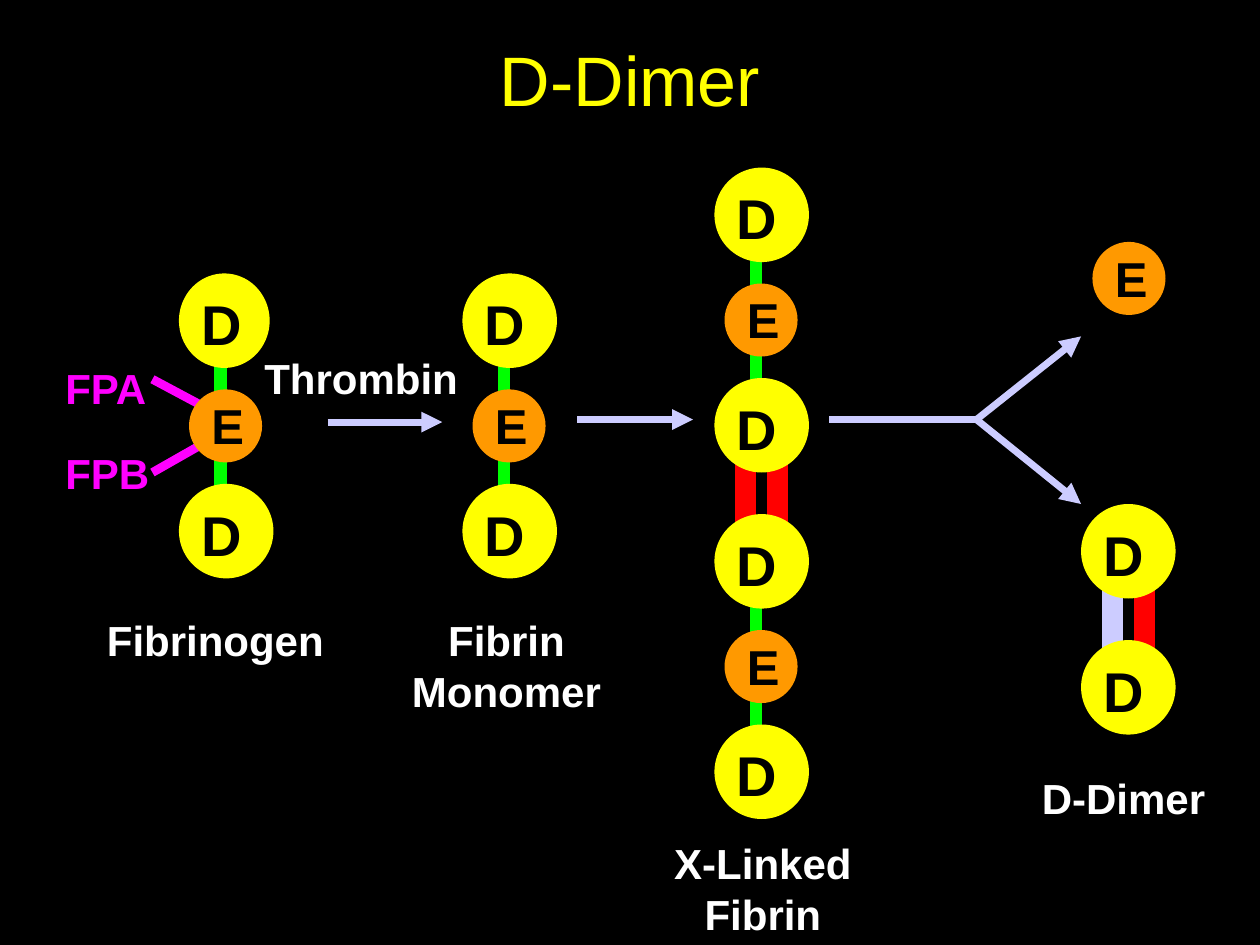
import dataclasses

import lxml.etree
import pptx
import pptx.dml.color
import pptx.enum.shapes
import pptx.enum.text
import pptx.oxml.ns
import pptx.util

Inches = pptx.util.Inches
qn = pptx.oxml.ns.qn


@dataclasses.dataclass(frozen=True)
class Theme:
    font: str = "Arial"
    background: str = "000000"
    letter: str = "000000"
    title: str = "FFFF00"
    label: str = "FFFFFF"
    d_domain: str = "FFFF00"
    e_domain: str = "FF9900"
    peptide: str = "FF00FF"
    strand: str = "00FF00"
    crosslink: str = "FF0000"
    arrow: str = "CCCCFF"
    title_size: int = 40
    d_size: int = 32
    e_size: int = 28
    label_size: int = 24


class Diagram:
    def __init__(self, prs, theme):
        self.theme = theme
        self.s = prs.slides.add_slide(prs.slide_layouts[5])
        fill = self.s.background.fill
        fill.solid()
        fill.fore_color.rgb = self.rgb(theme.background)

    def rgb(self, color):
        return pptx.dml.color.RGBColor.from_string(color)

    def run(self, p, text, size, color, bold):
        r = p.add_run()
        r.text = text
        r.font.name = self.theme.font
        r.font.size = pptx.util.Pt(size)
        r.font.bold = bold
        r.font.color.rgb = self.rgb(color)

    def title(self, text):
        sp = self.s.shapes.title
        sp.left, sp.top = Inches(0.75), Inches(0)
        sp.width, sp.height = Inches(8.5), Inches(1.25)
        tf = sp.text_frame
        tf.vertical_anchor = pptx.enum.text.MSO_ANCHOR.MIDDLE
        p = tf.paragraphs[0]
        p.alignment = pptx.enum.text.PP_ALIGN.CENTER
        self.run(p, text, self.theme.title_size, self.theme.title, False)

    def text(self, x, y, w, h, lines, size, color):
        sp = self.s.shapes.add_textbox(Inches(x), Inches(y), Inches(w), Inches(h))
        tf = sp.text_frame
        tf.word_wrap = False
        tf.auto_size = pptx.enum.text.MSO_AUTO_SIZE.SHAPE_TO_FIT_TEXT
        for i, line in enumerate(lines):
            p = tf.add_paragraph() if i else tf.paragraphs[0]
            if len(lines) > 1:
                p.alignment = pptx.enum.text.PP_ALIGN.CENTER
            self.run(p, line, size, color, True)

    def label(self, x, y, w, *lines, color=None):
        h = 0.1 + 0.4 * len(lines)
        self.text(x, y, w, h, lines, self.theme.label_size, color or self.theme.label)

    def line(self, start, end, color, width, arrow=False):
        sp = self.s.shapes.add_connector(
            pptx.enum.shapes.MSO_CONNECTOR.STRAIGHT, *map(Inches, start + end))
        sp.line.color.rgb = self.rgb(color)
        sp.line.width = pptx.util.Pt(width)
        if arrow:
            ln = sp.line._get_or_add_ln()
            lxml.etree.SubElement(ln, qn("a:tailEnd"), type="triangle")
        lxml.etree.SubElement(sp._element.spPr, qn("a:effectLst"))

    def disc(self, x, y, w, h, color):
        sp = self.s.shapes.add_shape(
            pptx.enum.shapes.MSO_SHAPE.OVAL, Inches(x), Inches(y), Inches(w), Inches(h))
        sp.shadow.inherit = False
        sp.fill.solid()
        sp.fill.fore_color.rgb = self.rgb(color)
        sp.line.fill.background()

    def d_domain(self, x, y, w=0.75):
        self.disc(x, y, w, 0.75, self.theme.d_domain)
        self.text(x + 0.08, y + 0.08, 0.52, 0.63, ["D"], self.theme.d_size, self.theme.letter)

    def e_domain(self, x, y):
        self.disc(x, y, 0.58, 0.58, self.theme.e_domain)
        self.text(x + 0.08, y, 0.46, 0.57, ["E"], self.theme.e_size, self.theme.letter)

    def monomer(self, x, y, top_width=0.75):
        for offset in (0.42, 1.33):
            self.line((x + 0.33, y + offset), (x + 0.33, y + offset + 0.67),
                      self.theme.strand, 7)
        self.d_domain(x, y, top_width)
        self.e_domain(x + 0.08, y + 0.92)
        self.d_domain(x, y + 1.67)

    def crosslinks(self, x, y, colors):
        for i, color in enumerate(colors, 1):
            self.line((x + 0.25 * i, y + 0.5), (x + 0.25 * i, y + 1.25), color, 12)

    def arrow(self, start, end, head=True):
        self.line(start, end, self.theme.arrow, 4, head)


def main():
    prs = pptx.Presentation()
    prs.slide_width, prs.slide_height = Inches(10), Inches(7.5)
    theme = Theme()
    d = Diagram(prs, theme)
    d.title("D-Dimer")

    for name, label_y, outer_y, inner_y in (("FPA", 2.83, 3.01, 3.32), ("FPB", 3.5, 3.75, 3.42)):
        d.line((1.21, outer_y), (1.79, inner_y), theme.peptide, 5)
        d.label(0.42, label_y, 0.87, name, color=theme.peptide)
    d.monomer(1.42, 2.17, top_width=0.72)
    d.monomer(3.67, 2.17)

    d.crosslinks(5.67, 3, (theme.crosslink, theme.crosslink))
    for y in (1.33, 4.08):
        d.monomer(5.67, y)

    d.e_domain(8.67, 1.92)
    d.crosslinks(8.58, 4, (theme.arrow, theme.crosslink))
    for y in (4, 5.08):
        d.d_domain(8.58, y)

    d.arrow((2.6, 3.35), (3.51, 3.35))
    d.arrow((4.58, 3.33), (5.5, 3.33))
    fork = (7.75, 3.33)
    d.arrow((6.58, 3.33), fork, head=False)
    for y in (4, 2.67):
        d.arrow(fork, (8.58, y))

    d.label(2, 2.75, 1.74, "Thrombin")
    d.label(0.75, 4.83, 1.92, "Fibrinogen")
    d.label(3.17, 4.83, 1.7, "Fibrin", "Monomer")
    d.label(5.25, 6.6, 1.61, "X-Linked", "Fibrin")
    d.label(8.17, 6.08, 1.5, "D-Dimer")

    prs.save("out.pptx")


if __name__ == "__main__":
    main()
